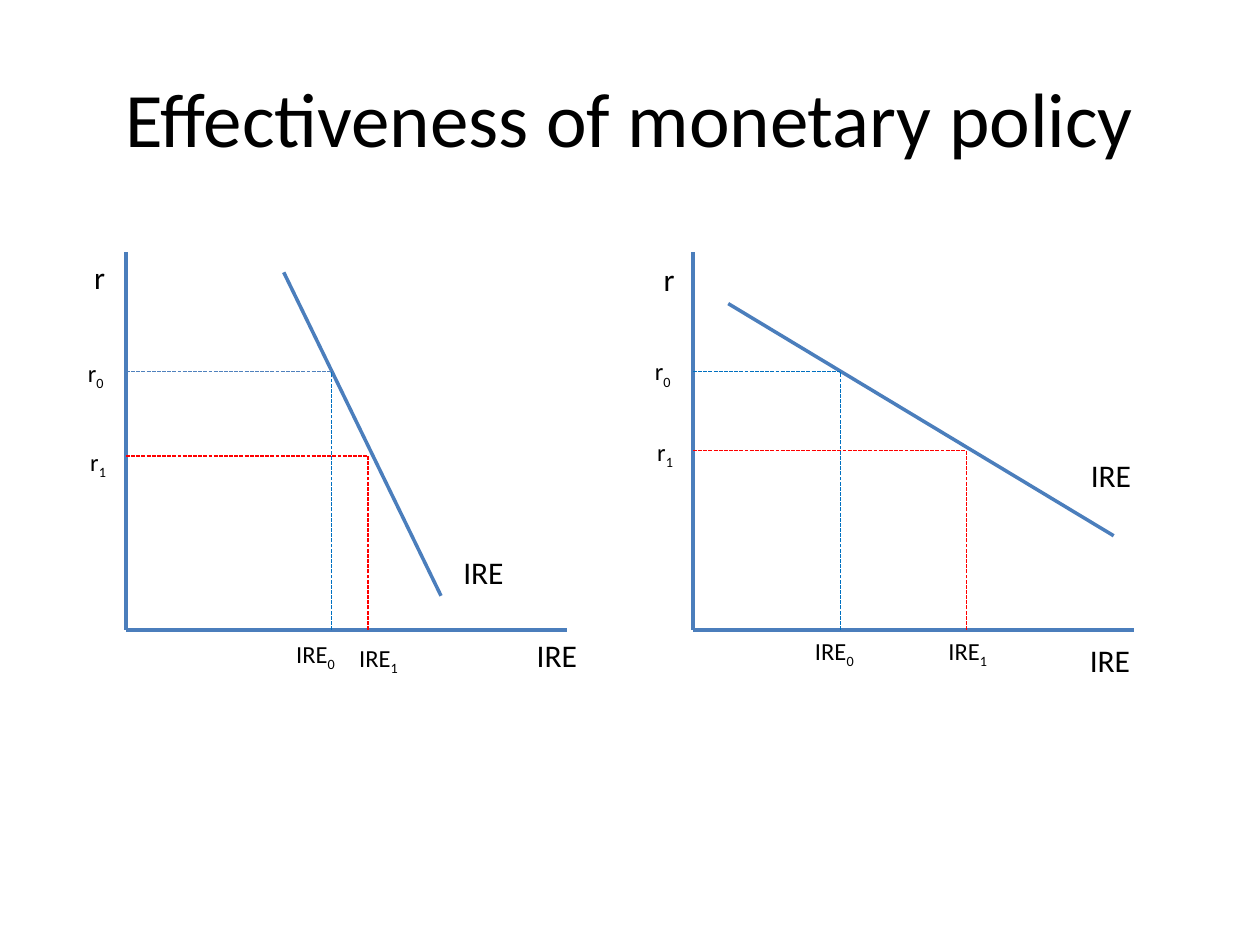
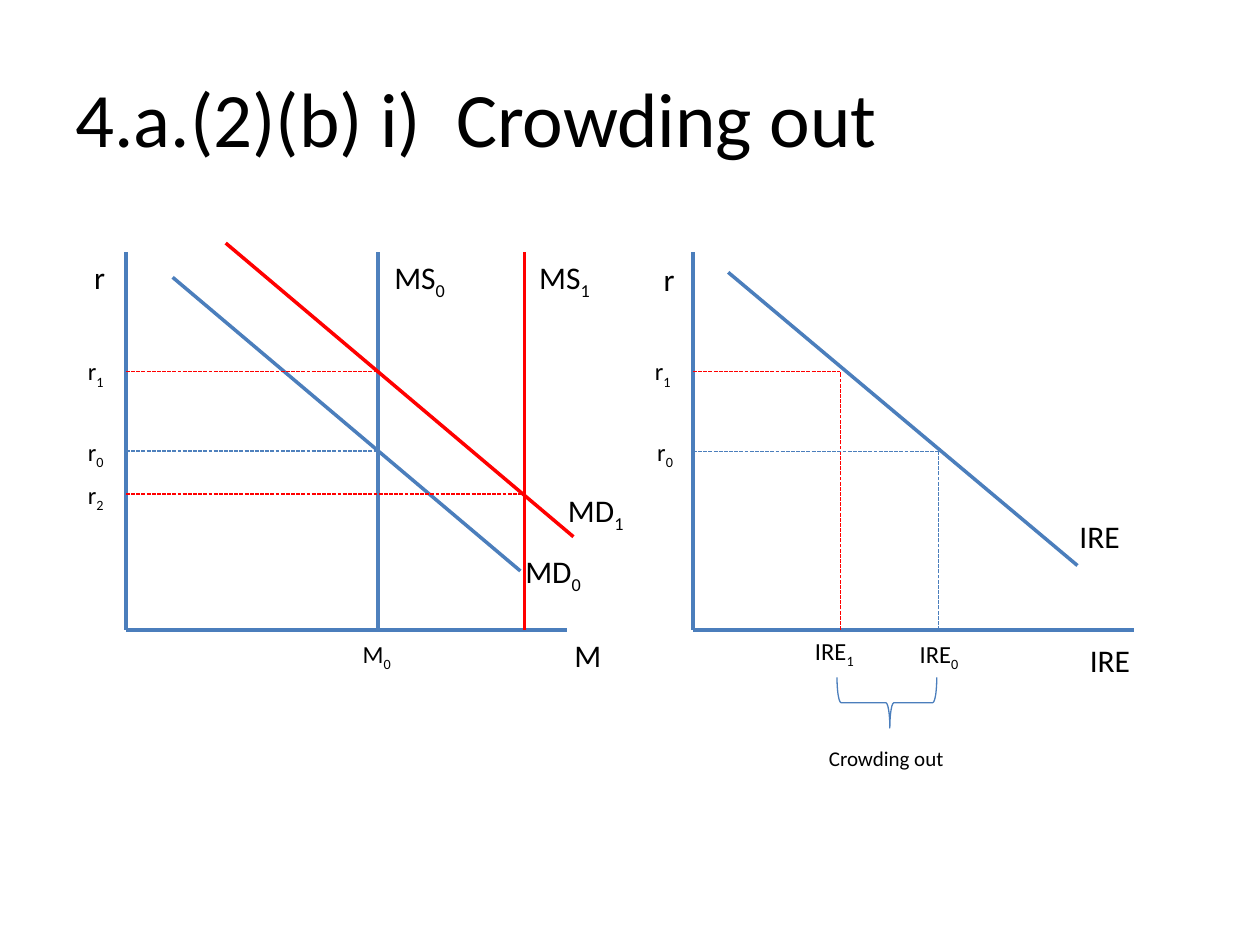
"""Builds two slides of interest-rate diagrams: monetary policy and crowding out."""
from lxml.etree import SubElement
from pptx import Presentation
from pptx.dml.color import RGBColor
from pptx.enum.dml import MSO_LINE
from pptx.enum.shapes import MSO_CONNECTOR, MSO_SHAPE
from pptx.enum.text import MSO_ANCHOR, PP_ALIGN
from pptx.oxml.ns import qn
from pptx.util import Cm, Pt

BLACK = RGBColor(0x00, 0x00, 0x00)
AXIS_BLUE = RGBColor(0x4B, 0x7E, 0xBC)
SOFT_BLUE = RGBColor(0x4F, 0x81, 0xBD)
DEEP_BLUE = RGBColor(0x00, 0x70, 0xC0)
RED = RGBColor(0xFF, 0x00, 0x00)

FONT = "Calibri"
SOLID = {"width": Pt(2)}
DASHED = {"width": Pt(0.75), "dash_style": MSO_LINE.SQUARE_DOT}
TITLE_FRAME = {"left": Cm(1.27), "top": Cm(0.76), "width": Cm(22.86), "height": Cm(3.18)}
TITLE_FONT = {"name": FONT, "size": Pt(44)}
LABEL_HEIGHTS = {18: 1.02, 14: 0.86, 12: 0.76}

LEFT_AXIS, RIGHT_AXIS = 2.54, 13.97
AXIS_TOP, BASELINE = 5.08, 12.7
AXIS_LENGTHS = {LEFT_AXIS: 8.89, RIGHT_AXIS: 8.89}

SHARED_LABELS = [
    ("r", "", 18, 1.65, 5.08, 0.84),
    ("r", "", 18, 13.13, 5.11, 0.84),
    ("IRE", "", 18, 21.72, 12.8, 1.47),
]

DIAGRAMS = [
    {
        "title": "Effectiveness of monetary policy",
        "alignment": PP_ALIGN.CENTER,
        "curves": [
            (5.72, 5.49, 8.89, 12.01, AXIS_BLUE),
            (14.68, 6.12, 22.45, 10.8, AXIS_BLUE),
        ],
        "guides": [
            (LEFT_AXIS, 6.68, 7.49, SOFT_BLUE, DEEP_BLUE),
            (LEFT_AXIS, 7.42, 9.19, RED, RED),
            (RIGHT_AXIS, 16.94, 7.49, DEEP_BLUE, DEEP_BLUE),
            (RIGHT_AXIS, 19.48, 9.08, RED, RED),
        ],
        "labels": [
            ("IRE", "", 18, 9.09, 11.02, 1.47),
            ("IRE", "", 18, 21.74, 9.07, 1.47),
            ("IRE", "", 18, 10.57, 12.7, 1.47),
            ("r", "0", 14, 1.52, 7.09, 0.97),
            ("r", "1", 14, 1.57, 8.89, 0.97),
            ("r", "0", 14, 12.95, 7.06, 0.97),
            ("r", "1", 14, 13, 8.69, 0.97),
            ("IRE", "0", 14, 5.72, 12.75, 1.52),
            ("IRE", "1", 14, 6.99, 12.83, 1.52),
            ("IRE", "0", 14, 16.18, 12.7, 1.52),
            ("IRE", "1", 14, 18.87, 12.7, 1.52),
        ],
    },
    {
        "title": "4.a.(2)(b) i)  Crowding out",
        "alignment": PP_ALIGN.LEFT,
        "curves": [
            (3.48, 5.59, 10.49, 11.51, AXIS_BLUE),
            (14.68, 5.49, 21.72, 11.4, AXIS_BLUE),
            (7.62, AXIS_TOP, 7.62, BASELINE, SOFT_BLUE),
            (4.55, 4.9, 11.56, 10.82, RED),
            (10.57, AXIS_TOP, 10.57, BASELINE, RED),
        ],
        "guides": [
            (LEFT_AXIS, 7.62, 7.49, RED, None),
            (LEFT_AXIS, 7.62, 9.09, SOFT_BLUE, None),
            (LEFT_AXIS, 10.57, 9.96, RED, None),
            (RIGHT_AXIS, 16.94, 7.49, RED, RED),
            (RIGHT_AXIS, 18.92, 9.1, AXIS_BLUE, AXIS_BLUE),
        ],
        "labels": [
            ("M", "", 18, 11.33, 12.7, 1.7),
            ("MD", "0", 18, 10.34, 11, 2.44),
            ("MD", "1", 18, 11.2, 9.78, 2.44),
            ("MS", "0", 18, 7.7, 5.08, 2.39),
            ("MS", "1", 18, 10.62, 5.08, 2.39),
            ("IRE", "", 18, 21.51, 10.29, 1.47),
            ("r", "1", 14, 1.52, 7.06, 0.97),
            ("r", "0", 14, 1.52, 8.69, 0.97),
            ("r", "2", 14, 1.52, 9.55, 0.97),
            ("r", "1", 14, 12.95, 7.06, 0.97),
            ("r", "0", 14, 13, 8.69, 0.97),
            ("M", "0", 14, 7.06, 12.75, 1.24),
            ("IRE", "1", 14, 16.18, 12.7, 1.52),
            ("IRE", "0", 14, 18.29, 12.75, 1.52),
            ("Crowding out", "", 12, 16.46, 14.91, 2.92),
        ],
    },
]


def draw_line(slide, x1, y1, x2, y2, color, style):
    connector = slide.shapes.add_connector(
        MSO_CONNECTOR.STRAIGHT, Cm(x1), Cm(y1), Cm(x2), Cm(y2))
    connector.line.color.rgb = color
    for attribute, value in style.items():
        setattr(connector.line, attribute, value)
    SubElement(connector._element.spPr, qn("a:effectLst"))


def add_label(slide, symbol, subscript, size, left, top, width):
    frame = slide.shapes.add_textbox(
        Cm(left), Cm(top), Cm(width), Cm(LABEL_HEIGHTS[size])).text_frame
    frame.word_wrap = True
    for text, baseline in ((symbol, "0"), (subscript, "-25000")):
        if text:
            run = frame.paragraphs[0].add_run()
            run.text = text
            for attribute, value in {"name": FONT, "size": Pt(size)}.items():
                setattr(run.font, attribute, value)
            run.font.color.rgb = BLACK
            run._r.get_or_add_rPr().set("baseline", baseline)


presentation = Presentation()
presentation.slide_width, presentation.slide_height = Cm(25.4), Cm(19.05)

for diagram in DIAGRAMS:
    slide = presentation.slides.add_slide(presentation.slide_layouts[5])
    heading = slide.shapes.title
    for attribute, value in TITLE_FRAME.items():
        setattr(heading, attribute, value)
    heading.text_frame.text = diagram["title"]
    heading.text_frame.vertical_anchor = MSO_ANCHOR.MIDDLE
    heading_line = heading.text_frame.paragraphs[0]
    heading_line.alignment = diagram["alignment"]
    for attribute, value in TITLE_FONT.items():
        setattr(heading_line.runs[0].font, attribute, value)
    heading_line.runs[0].font.color.rgb = BLACK

    for axis, length in AXIS_LENGTHS.items():
        draw_line(slide, axis, AXIS_TOP, axis, BASELINE, AXIS_BLUE, SOLID)
        draw_line(slide, axis, BASELINE, axis + length, BASELINE, AXIS_BLUE, SOLID)
    for *ends, color in diagram["curves"]:
        draw_line(slide, *ends, color, SOLID)
    for axis, quantity, rate, rate_color, quantity_color in diagram["guides"]:
        draw_line(slide, axis, rate, quantity, rate, rate_color, DASHED)
        if quantity_color:
            draw_line(slide, quantity, BASELINE, quantity, rate, quantity_color, DASHED)
    for label in SHARED_LABELS + diagram["labels"]:
        add_label(slide, *label)

crowding_brace = slide.shapes.add_shape(
    MSO_SHAPE.LEFT_BRACE, Cm(17.37), Cm(13.16), Cm(1.02), Cm(2.01))
crowding_brace.rotation = 270
crowding_brace.adjustments[0] = 0.08
crowding_brace.adjustments[1] = 0.53
crowding_brace.shadow.inherit = False
crowding_brace.fill.background()
crowding_brace.line.color.rgb = AXIS_BLUE
crowding_brace.line.width = Pt(0.75)

presentation.save("out.pptx")
